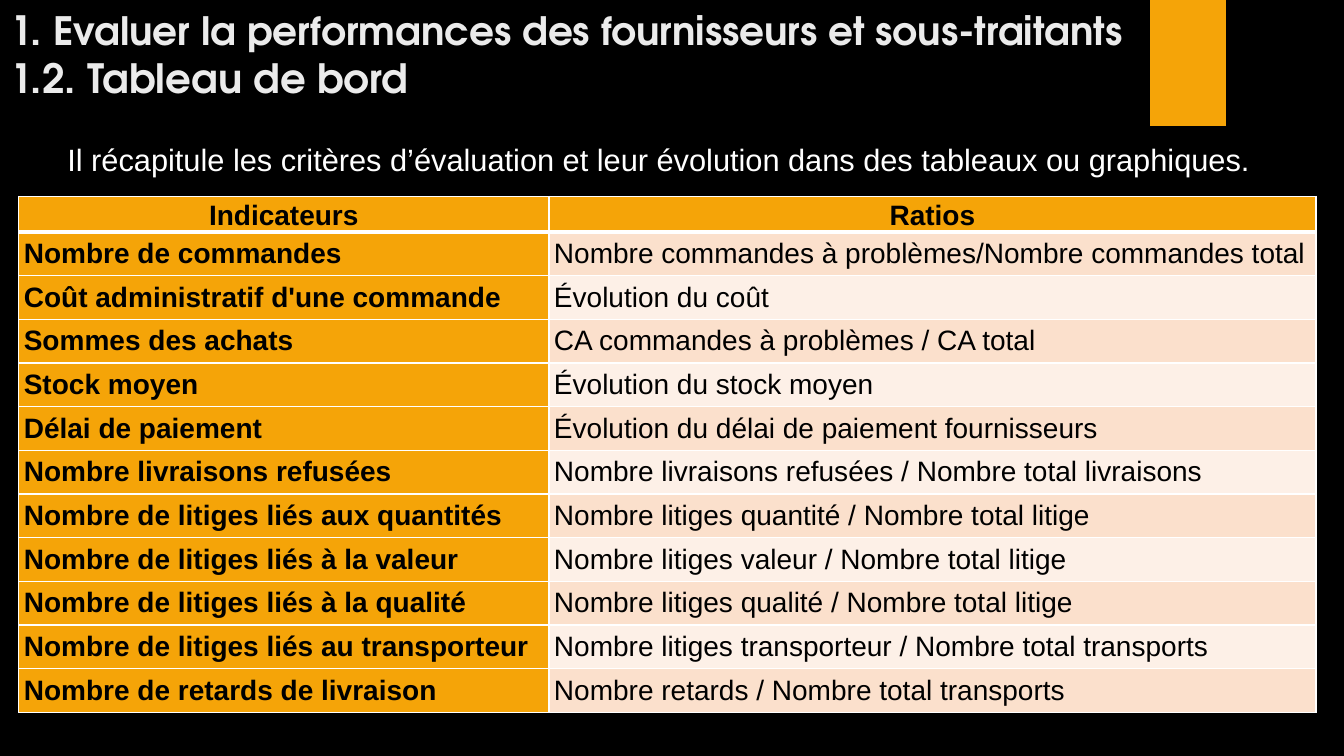
from dataclasses import dataclass

from lxml import etree
from pptx import Presentation
from pptx.dml.color import RGBColor
from pptx.enum.shapes import MSO_SHAPE
from pptx.enum.text import MSO_ANCHOR, MSO_AUTO_SIZE, PP_ALIGN
from pptx.oxml.ns import qn
from pptx.slide import Slide
from pptx.table import _Cell
from pptx.text.text import _Paragraph
from pptx.util import Pt

RECTANGLE = MSO_SHAPE.RECTANGLE
BOTTOM, MIDDLE, TOP = MSO_ANCHOR.BOTTOM, MSO_ANCHOR.MIDDLE, MSO_ANCHOR.TOP
LEFT, CENTER = PP_ALIGN.LEFT, PP_ALIGN.CENTER
NO_AUTOFIT = MSO_AUTO_SIZE.NONE
TITLE_ONLY = 5


@dataclass(frozen=True)
class Theme:
    background: str = "000000"
    accent: str = "F5A408"
    dark_band: str = "FBE0CC"
    light_band: str = "FDF0E7"
    border: str = "FFFFFF"
    title_color: str = "EBEBEB"
    intro_color: str = "FFFFFF"
    table_color: str = "000000"
    title_font: str = "TeX Gyre Adventor"
    body_font: str = "Arial"
    number_size: float = 28.8
    title_size: float = 27.9
    intro_size: float = 22
    table_size: float = 20


@dataclass(frozen=True)
class TextStyle:
    font: str
    size: float
    color: str
    bold: bool = False


@dataclass(frozen=True)
class CellStyle:
    fill: str
    bold: bool
    align: PP_ALIGN
    anchor: MSO_ANCHOR
    top_border: float = 1
    bottom_border: float = 1


@dataclass(frozen=True)
class Indicator:
    name: str
    ratio: str


THEME = Theme()
NUMBER_STYLE = TextStyle(THEME.title_font, THEME.number_size, THEME.title_color, True)
TITLE_STYLE = TextStyle(THEME.title_font, THEME.title_size, THEME.title_color, True)
INTRO_STYLE = TextStyle(THEME.body_font, THEME.intro_size, THEME.intro_color)

HEADER = Indicator("Indicateurs", "Ratios")
INDICATORS = [
    Indicator("Nombre de commandes", "Nombre commandes à problèmes/Nombre commandes total"),
    Indicator("Coût administratif d'une commande", "Évolution du coût"),
    Indicator("Sommes des achats", "CA commandes à problèmes / CA total"),
    Indicator("Stock moyen", "Évolution du stock moyen"),
    Indicator("Délai de paiement", "Évolution du délai de paiement fournisseurs"),
    Indicator("Nombre livraisons refusées", "Nombre livraisons refusées / Nombre total livraisons"),
    Indicator("Nombre de litiges liés aux quantités", "Nombre litiges quantité / Nombre total litige"),
    Indicator("Nombre de litiges liés à la valeur", "Nombre litiges valeur / Nombre total litige"),
    Indicator("Nombre de litiges liés à la qualité", "Nombre litiges qualité / Nombre total litige"),
    Indicator("Nombre de litiges liés au transporteur", "Nombre litiges transporteur / Nombre total transports"),
    Indicator("Nombre de retards de livraison", "Nombre retards / Nombre total transports"),
]
COLUMN_WIDTHS = (378.7, 547.9)
HEADER_HEIGHT, ROW_HEIGHT = 25.2, 31.22


def rgb(color: str) -> RGBColor:
    return RGBColor.from_string(color)


def add_run(paragraph: _Paragraph, text: str, style: TextStyle) -> None:
    run = paragraph.add_run()
    run.text = text
    run.font.name = style.font
    run.font.size = Pt(style.size)
    run.font.bold = style.bold
    run.font.color.rgb = rgb(style.color)


def add_title(slide: Slide) -> None:
    title = slide.shapes.title
    title.left, title.top, title.width, title.height = Pt(0), Pt(0), Pt(850), Pt(76.5)
    frame = title.text_frame
    frame.word_wrap = True
    frame.auto_size = NO_AUTOFIT
    frame.vertical_anchor = BOTTOM
    paragraph = frame.paragraphs[0]
    paragraph.alignment = LEFT
    add_run(paragraph, "1. ", NUMBER_STYLE)
    add_run(paragraph, "Evaluer la performances des fournisseurs et sous-traitants", TITLE_STYLE)
    paragraph.add_line_break()
    add_run(paragraph, "1.2. Tableau de bord", NUMBER_STYLE)


def add_accent_tab(slide: Slide) -> None:
    tab = slide.shapes.add_shape(RECTANGLE, Pt(821.6), Pt(0), Pt(54), Pt(90))
    tab.shadow.inherit = False
    tab.fill.solid()
    tab.fill.fore_color.rgb = rgb(THEME.accent)
    tab.line.fill.background()


def add_intro(slide: Slide) -> None:
    box = slide.shapes.add_textbox(Pt(0), Pt(97.2), Pt(941), Pt(33.9))
    frame = box.text_frame
    frame.word_wrap = True
    frame.vertical_anchor = TOP
    paragraph = frame.paragraphs[0]
    paragraph.alignment = CENTER
    add_run(paragraph, "Il récapitule les critères d’évaluation et leur évolution dans des tableaux ou graphiques.", INTRO_STYLE)


def set_borders(cell: _Cell, style: CellStyle) -> None:
    properties = cell._tc.get_or_add_tcPr()
    widths = {"a:lnL": 1, "a:lnR": 1, "a:lnT": style.top_border, "a:lnB": style.bottom_border}
    for tag, width in widths.items():
        line = etree.SubElement(properties, qn(tag), w=str(Pt(width)))
        fill = etree.SubElement(line, qn("a:solidFill"))
        etree.SubElement(fill, qn("a:srgbClr"), val=THEME.border)


def fill_cell(cell: _Cell, text: str, style: CellStyle) -> None:
    # Borders come before the fill in the cell properties
    set_borders(cell, style)
    cell.fill.solid()
    cell.fill.fore_color.rgb = rgb(style.fill)
    cell.margin_left = cell.margin_right = Pt(3.6)
    cell.margin_top = cell.margin_bottom = Pt(0)
    cell.vertical_anchor = style.anchor
    paragraph = cell.text_frame.paragraphs[0]
    paragraph.alignment = style.align
    add_run(paragraph, text, TextStyle(THEME.body_font, THEME.table_size, THEME.table_color, style.bold))


def add_dashboard(slide: Slide) -> None:
    row_count = len(INDICATORS) + 1
    height = HEADER_HEIGHT + ROW_HEIGHT * len(INDICATORS)
    table = slide.shapes.add_table(
        row_count, len(COLUMN_WIDTHS), Pt(13.4), Pt(140.4), Pt(sum(COLUMN_WIDTHS)), Pt(height)
    ).table
    for column, width in zip(table.columns, COLUMN_WIDTHS):
        column.width = Pt(width)

    # Header row
    table.rows[0].height = Pt(HEADER_HEIGHT)
    header_style = CellStyle(THEME.accent, True, CENTER, BOTTOM, bottom_border=3)
    fill_cell(table.cell(0, 0), HEADER.name, header_style)
    fill_cell(table.cell(0, 1), HEADER.ratio, header_style)

    # Indicator rows with alternating bands
    for row, indicator in enumerate(INDICATORS, start=1):
        table.rows[row].height = Pt(ROW_HEIGHT)
        band = THEME.dark_band if row % 2 else THEME.light_band
        top_border = 3 if row == 1 else 1
        fill_cell(table.cell(row, 0), indicator.name, CellStyle(THEME.accent, True, LEFT, MIDDLE, top_border))
        fill_cell(table.cell(row, 1), indicator.ratio, CellStyle(band, False, LEFT, MIDDLE, top_border))


def main() -> None:
    presentation = Presentation()
    presentation.slide_width, presentation.slide_height = Pt(960), Pt(540)
    slide = presentation.slides.add_slide(presentation.slide_layouts[TITLE_ONLY])
    slide.background.fill.solid()
    slide.background.fill.fore_color.rgb = rgb(THEME.background)
    add_accent_tab(slide)
    add_title(slide)
    add_intro(slide)
    add_dashboard(slide)
    presentation.save("out.pptx")


if __name__ == "__main__":
    main()
